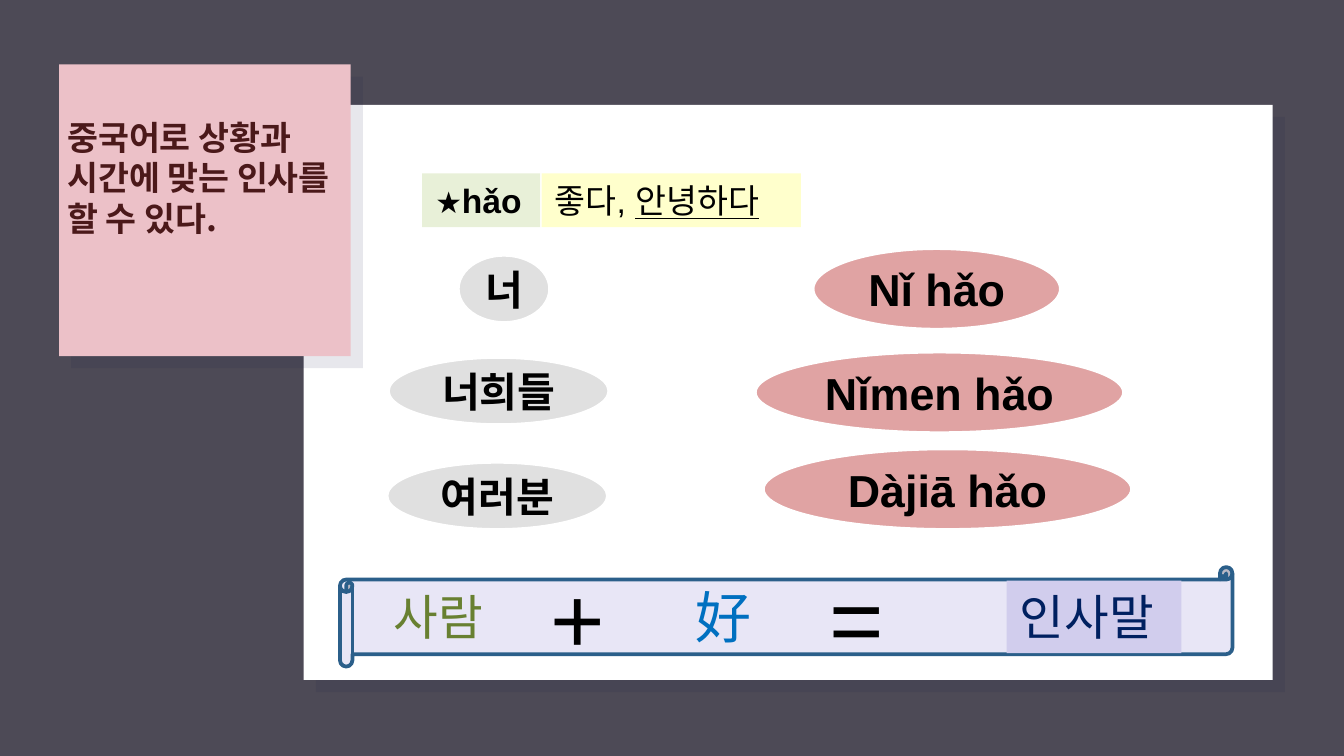
from lxml.etree import SubElement
from pptx import Presentation
from pptx.dml.color import RGBColor
from pptx.enum.shapes import MSO_SHAPE as Shape
from pptx.enum.text import MSO_ANCHOR as Anchor, MSO_AUTO_SIZE as AutoSize, PP_ALIGN as Align
from pptx.oxml.ns import qn
from pptx.util import Inches, Pt

LATIN, KOREAN = "Arial", "Noto Sans CJK KR"
BLACK, WHITE = "000000", "FFFFFF"

TITLE = [("중국어로 상황과 시간에 맞는 인사를 할 수 있다", {}), (".", {"name": KOREAN})]
# left, top, width, height, fill
CARDS = [(2.26, 0.78, 7.21, 4.28, WHITE), (0.44, 0.48, 2.17, 2.17, "ECC1C8")]
SHADOW_OFFSET = 0.09

# text, left, top, width
PEOPLE = [("너", 3.41, 1.9, 0.68), ("너희들", 2.89, 2.66, 1.64), ("여러분", 2.88, 3.44, 1.64)]
GREETINGS = [("Nǐ hǎo", 6.05, 1.85, 1.84), ("Nǐmen hǎo", 5.62, 2.62, 2.74),
             ("Dàjiā hǎo", 5.68, 3.34, 2.74)]
# entries, height, fill, text size
OVAL_GROUPS = [(GREETINGS, 0.6, "E0A3A3", 24), (PEOPLE, 0.5, "E0E0E0", 22)]

# runs, left, top, width, height, fill
WORD_CARD = [
    ([("★", {"size": Pt(16), "bold": True}), ("hǎo", {"size": Pt(18), "bold": True})],
     3.14, 1.29, 0.88, 0.4, "E8F0D8"),
    ([("좋다, ", {"size": Pt(18)}), ("안녕하다", {"size": Pt(18), "underline": True})],
     4.03, 1.29, 1.93, 0.4, "FFFFCC"),
]
# text, left, width, height, size, colour, fill
FORMULA = [
    ("사람", 2.83, 0.93, 0.54, 26, "688031", None),
    ("+", 4, 0.69, 0.94, 50, BLACK, None),
    ("好", 5.08, 0.62, 0.61, 30, "0070C0", None),
    ("=", 6.07, 0.69, 0.94, 50, BLACK, None),
    ("인사말", 7.49, 1.3, 0.54, 26, "002060", "D1CDED"),
]
SCROLL = (2.53, 4.22, 6.64, 0.74)


def rgb(value):
    return RGBColor.from_string(value)


def add_shape(kind, left, top, width, height, fill, line=None, line_width=1.5):
    shape = slide.shapes.add_shape(kind, *map(Inches, (left, top, width, height)))
    shape.shadow.inherit = False
    shape.fill.solid()
    shape.fill.fore_color.rgb = rgb(fill)
    if line:
        shape.line.color.rgb = rgb(line)
        shape.line.width = Pt(line_width)
    else:
        shape.line.fill.background()
    return shape


def write(shape, runs, color=BLACK, align=Align.LEFT, inset=None, **frame_format):
    """Fill the shape with one paragraph of (text, font format) runs."""
    frame = shape.text_frame
    settings = {"word_wrap": True, "vertical_anchor": Anchor.TOP, **frame_format}
    if inset is not None:
        for side in ("left", "right", "top", "bottom"):
            settings["margin_" + side] = Inches(inset)
    for name, value in settings.items():
        setattr(frame, name, value)
    para = frame.paragraphs[0]
    para.alignment = align
    for text, font_format in runs:
        span = para.add_run()
        span.text = text
        for name, value in {"name": LATIN, **font_format}.items():
            setattr(span.font, name, value)
        span.font.color.rgb = rgb(color)
        SubElement(span.font._element, qn("a:ea"), typeface=KOREAN)


deck = Presentation()
deck.slide_width = Inches(10)
deck.slide_height = deck.slide_width * 9 // 16
slide = deck.slides.add_slide(deck.slide_layouts[5])
slide.background.fill.solid()
slide.background.fill.fore_color.rgb = rgb("4D4A56")

for left, top, width, height, fill in CARDS:
    shade = add_shape(Shape.RECTANGLE, left + SHADOW_OFFSET, top + SHADOW_OFFSET,
                      width, height, "1B1B46")
    shade_color = shade._element.spPr.find(qn("a:solidFill"))[0]
    SubElement(shade_color, qn("a:alpha"), val="10000")
    add_shape(Shape.RECTANGLE, left, top, width, height, fill)

add_shape(Shape.HORIZONTAL_SCROLL, *SCROLL, "E8E6F6", "2B5F8A", 2)

for entries, height, fill, size in OVAL_GROUPS:
    for text, left, top, width in entries:
        oval = add_shape(Shape.OVAL, left, top, width, height, fill, WHITE)
        write(oval, [(text, {"size": Pt(size), "bold": True})], align=Align.CENTER,
              inset=0.1, vertical_anchor=Anchor.MIDDLE)

for runs, *place, fill in WORD_CARD:
    write(add_shape(Shape.RECTANGLE, *place, fill), runs,
          auto_size=AutoSize.SHAPE_TO_FIT_TEXT)

middle = SCROLL[1] + SCROLL[3] / 2
for text, left, width, height, size, color, fill in FORMULA:
    place = (left, middle - height / 2, width, height)
    if fill:
        box = add_shape(Shape.RECTANGLE, *place, fill)
    else:
        box = slide.shapes.add_textbox(*map(Inches, place))
    write(box, [(text, {"size": Pt(size)})], color, word_wrap=False,
          auto_size=AutoSize.SHAPE_TO_FIT_TEXT)

title = slide.shapes.title
title.left, title.top, title.width, title.height = map(Inches, (0.4, 0.77, 2.23, 1.77))
write(title, [(text, {"size": Pt(18), "bold": True, **extra}) for text, extra in TITLE],
      "4B191A", inset=0.1, auto_size=AutoSize.NONE)
slide.shapes._spTree.append(title._element)  # in front of the cards

deck.save("out.pptx")
